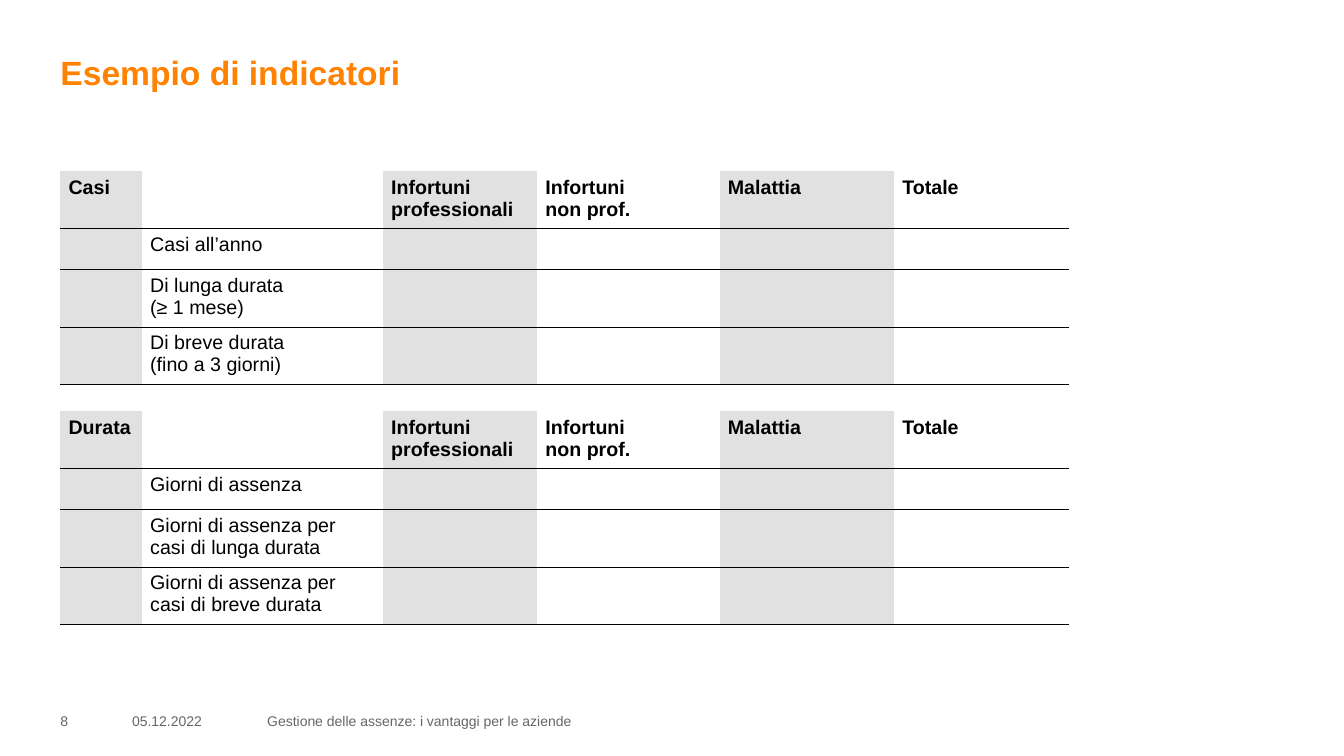
from dataclasses import dataclass

from lxml import etree
from pptx import Presentation
from pptx.dml.color import RGBColor
from pptx.enum.text import MSO_ANCHOR
from pptx.oxml.ns import qn
from pptx.util import Inches, Pt

TOP, MIDDLE = MSO_ANCHOR.TOP, MSO_ANCHOR.MIDDLE


@dataclass(frozen=True)
class Theme:
    font: str = "Arial"
    accent: str = "FF8200"
    text: str = "000000"
    muted: str = "666666"
    band: str = "E1E1E1"
    title_size: float = 24
    table_size: float = 14
    footer_size: float = 10
    rule: float = 0.67


class SlideBuilder:
    def __init__(self, prs, theme):
        self.theme = theme
        self.s = prs.slides.add_slide(prs.slide_layouts[6])

    def style(self, tf, size, color, bold=False):
        for p in tf.paragraphs:
            for r in p.runs:
                r.font.name = self.theme.font
                r.font.size = Pt(size)
                r.font.bold = bold
                r.font.color.rgb = RGBColor.from_string(color)

    def text(self, text, box, size, color, bold=False, anchor=TOP):
        sp = self.s.shapes.add_textbox(*map(Inches, box))
        tf = sp.text_frame
        tf.word_wrap = True
        tf.vertical_anchor = anchor
        tf.margin_left = tf.margin_right = tf.margin_top = tf.margin_bottom = 0
        tf.text = text
        self.style(tf, size, color, bold)

    def borders(self, cell, ruled_sides):
        tc_pr = cell._tc.get_or_add_tcPr()
        # Border elements come before the fill, in this order
        for i, side in enumerate(("lnL", "lnR", "lnT", "lnB")):
            ln = etree.Element(qn(f"a:{side}"))
            if side in ruled_sides:
                ln.set("w", str(int(Pt(self.theme.rule))))
                fill = etree.SubElement(ln, qn("a:solidFill"))
                etree.SubElement(fill, qn("a:srgbClr"), val=self.theme.text)
            else:
                etree.SubElement(ln, qn("a:noFill"))
            tc_pr.insert(i, ln)

    def table(self, rows, left, top, widths, heights):
        frame = self.s.shapes.add_table(
            len(rows), len(widths), Inches(left), Inches(top),
            Inches(sum(widths)), Inches(sum(heights)))
        table = frame.table
        table.horz_banding = False
        table.first_row = False
        for column, width in zip(table.columns, widths):
            column.width = Inches(width)
        for i, (row, height) in enumerate(zip(rows, heights)):
            table.rows[i].height = Inches(height)
            for j, text in enumerate(row):
                self.cell(table.cell(i, j), text, header=i == 0, shaded=j % 2 == 0)

    def cell(self, cell, text, header, shaded):
        cell.margin_left = cell.margin_right = Inches(0.08)
        cell.margin_top = cell.margin_bottom = Inches(0.05)
        if shaded:
            cell.fill.solid()
            cell.fill.fore_color.rgb = RGBColor.from_string(self.theme.band)
        else:
            cell.fill.background()
        self.borders(cell, ("lnB",) if header else ("lnT", "lnB"))
        if text:
            cell.text_frame.text = text
            self.style(cell.text_frame, self.theme.table_size, self.theme.text, header)


LEFT = 0.6
WIDTHS = (0.81, 2.39, 1.53, 1.81, 1.73, 1.73)
HEIGHTS = (0.54, 0.41, 0.54, 0.54)
# \v is a line break inside a paragraph
GROUPS = ("Infortuni professionali", "Infortuni \vnon prof.", "Malattia", "Totale")
TABLES = (
    (1.7, "Casi", ("Casi all’anno",
                   "Di lunga durata \v(≥ 1 mese)",
                   "Di breve durata \v(fino a 3 giorni)")),
    (4.08, "Durata", ("Giorni di assenza",
                      "Giorni di assenza per casi di lunga durata",
                      "Giorni di assenza per casi di breve durata")),
)
FOOTER = (
    ("8", LEFT, 0.55),
    ("05.12.2022", 1.31, 1.18),
    ("Gestione delle assenze: i vantaggi per le aziende", 2.65, 8.58),
)


def main():
    prs = Presentation()
    prs.slide_width, prs.slide_height = Inches(13.33), Inches(7.5)
    theme = Theme()
    slide = SlideBuilder(prs, theme)

    # Title
    slide.text("Esempio di indicatori", (LEFT, 0.52, 12.13, 0.94),
               theme.title_size, theme.accent, bold=True)

    # Indicator tables
    for top, name, indicators in TABLES:
        rows = [(name, "", *GROUPS)]
        rows += [("", indicator, *[""] * len(GROUPS)) for indicator in indicators]
        slide.table(rows, LEFT, top, WIDTHS, HEIGHTS)

    # Footer
    for text, left, width in FOOTER:
        slide.text(text, (left, 7.05, width, 0.2),
                   theme.footer_size, theme.muted, anchor=MIDDLE)

    prs.save("out.pptx")


if __name__ == "__main__":
    main()
